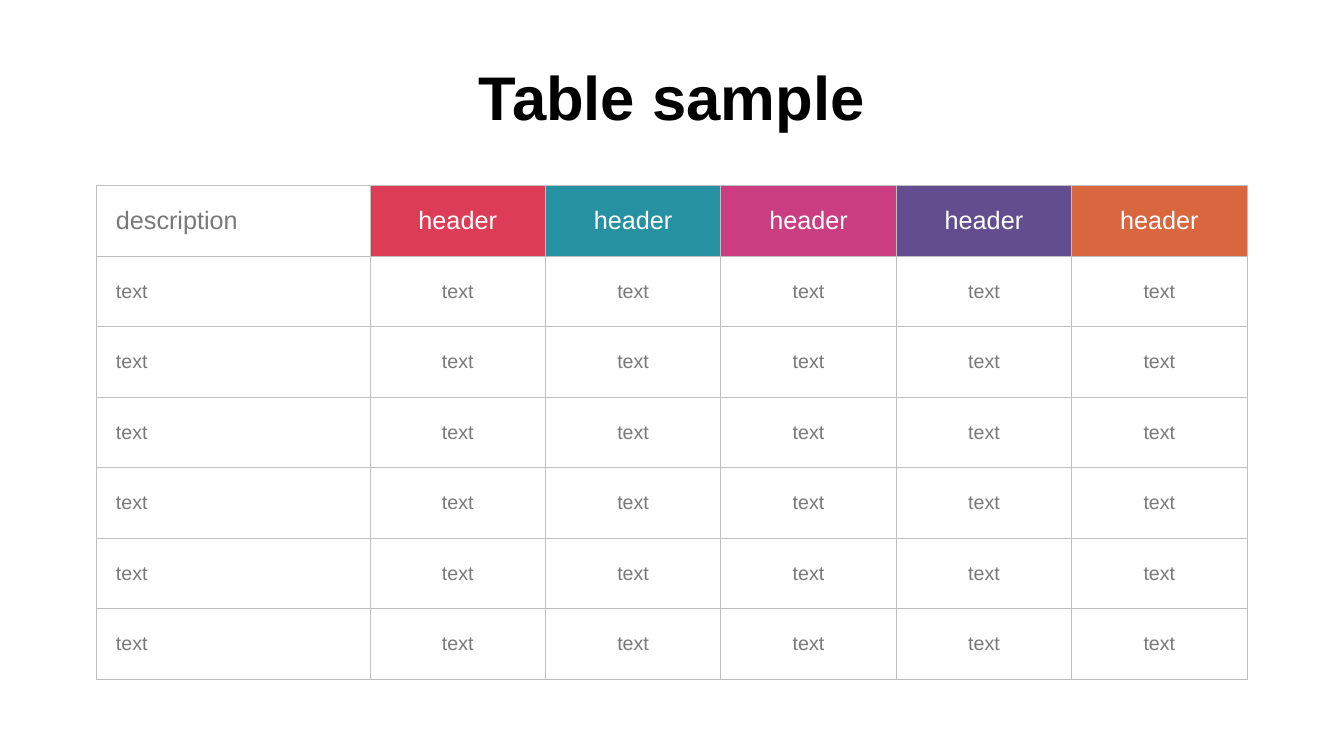
from dataclasses import dataclass

from lxml.etree import SubElement as Sub
from pptx import Presentation
from pptx.dml.color import RGBColor as Rgb
from pptx.enum.text import MSO_ANCHOR as Anchor, PP_ALIGN as Align
from pptx.oxml.ns import qn
from pptx.util import Inches, Pt

# Content
TITLE = "Table sample"
HEAD = ["description"] + ["header"] * 5
BODY = [["text"] * 6 for _ in range(6)]


@dataclass(frozen=True)
class Theme:
    font: str = "Arial"
    black: str = "000000"
    white: str = "FFFFFF"
    grey: str = "797979"
    line: str = "BFBFBF"
    heads: tuple = ("DC3C55", "2591A1", "CB3D81", "624D8E", "D8673F")
    title: int = 44
    head: int = 18
    body: int = 14
    rule: float = 0.75


LOOK = Theme()

# Layout, in inches
LEFT, TOP = 0.96, 1.84
FIRST, WIDE, HIGH = 2.71, 1.74, 0.7


def write(frame, text, size, color, align, bold=False):
    para = frame.paragraphs[0]
    para.alignment = align
    run = para.add_run()
    run.text = text
    font = run.font
    font.name, font.size, font.bold = LOOK.font, Pt(size), bold
    font.color.rgb = Rgb.from_string(color)


def inset(box, left, top, right, low):
    box.margin_left, box.margin_top = Inches(left), Inches(top)
    box.margin_right, box.margin_bottom = Inches(right), Inches(low)
    box.vertical_anchor = Anchor.MIDDLE


def border(cell):
    props = cell._tc.get_or_add_tcPr()
    for side in ("lnL", "lnR", "lnT", "lnB"):
        line = Sub(props, qn("a:" + side), w=str(Pt(LOOK.rule)))
        fill = Sub(line, qn("a:solidFill"))
        Sub(fill, qn("a:srgbClr"), val=LOOK.line)


def style(cell, text, row, col):
    top, side = row == 0, col == 0
    inset(cell, 0.19 if side else 0.05, 0.02, 0.07 if side else 0.05, 0.02)
    border(cell)
    if top:
        cell.fill.solid()
        shade = LOOK.white if side else LOOK.heads[col - 1]
        cell.fill.fore_color.rgb = Rgb.from_string(shade)
    else:
        cell.fill.background()
    write(cell.text_frame, text, LOOK.head if top else LOOK.body,
          LOOK.white if top and not side else LOOK.grey,
          Align.LEFT if side else Align.CENTER)


def main():
    deck = Presentation()
    deck.slide_width, deck.slide_height = Inches(13.33), Inches(7.5)
    slide = deck.slides.add_slide(deck.slide_layouts[5])

    # Title
    title = slide.shapes.title
    title.left, title.top = Inches(2.08), Inches(0.72)
    title.width, title.height = Inches(9.17), Inches(0.47)
    inset(title.text_frame, 0.13, 0.07, 0.13, 0.07)
    write(title.text_frame, TITLE, LOOK.title, LOOK.black, Align.CENTER, True)

    # Table
    rows = [HEAD] + BODY
    widths = [FIRST] + [WIDE] * (len(HEAD) - 1)
    table = slide.shapes.add_table(
        len(rows), len(HEAD), Inches(LEFT), Inches(TOP),
        Inches(sum(widths)), Inches(HIGH * len(rows))).table
    table.first_row = table.horz_banding = False
    for col, width in zip(table.columns, widths):
        col.width = Inches(width)
    for r, row in enumerate(rows):
        table.rows[r].height = Inches(HIGH)
        for c, text in enumerate(row):
            style(table.cell(r, c), text, r, c)

    deck.save("out.pptx")


if __name__ == "__main__":
    main()
